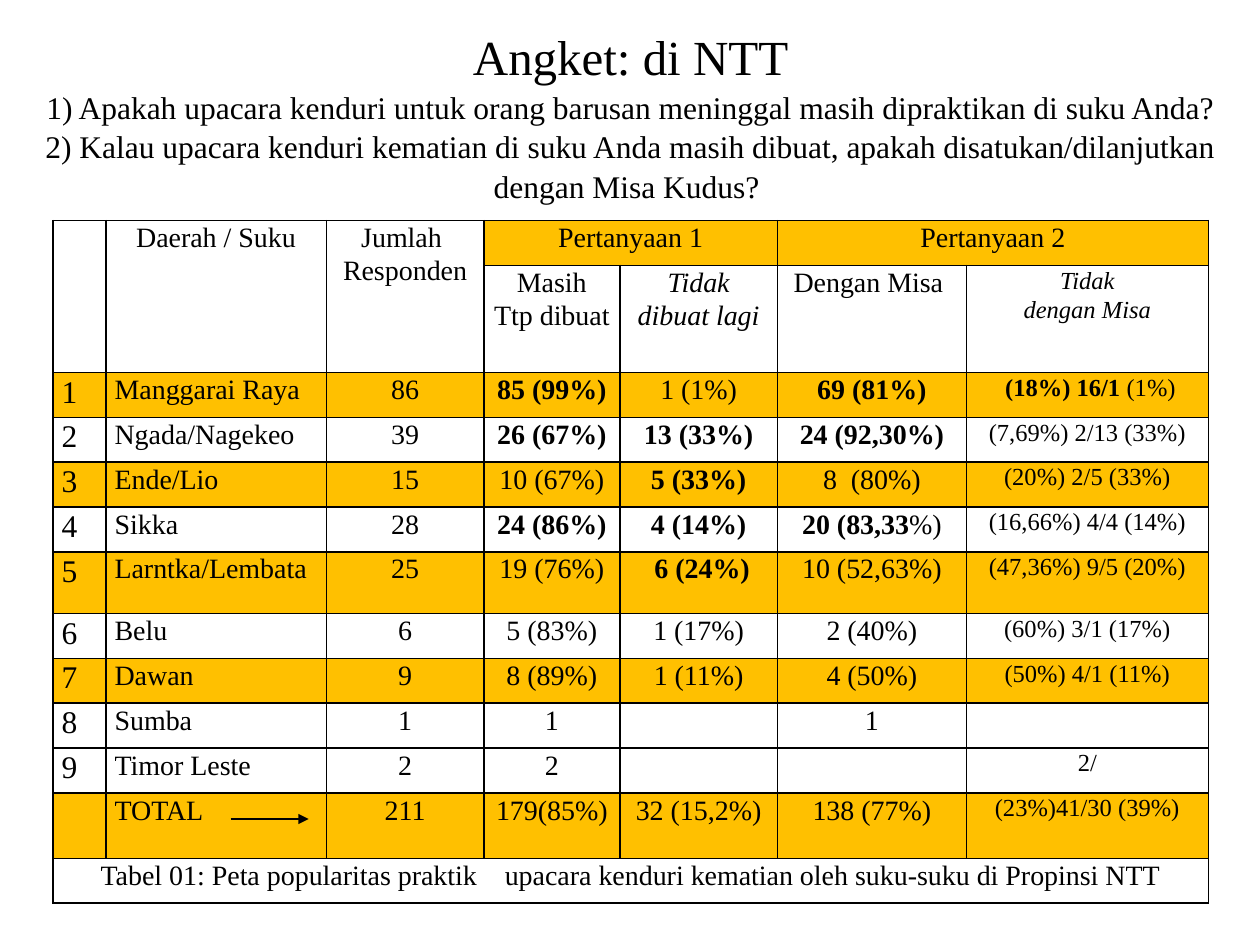
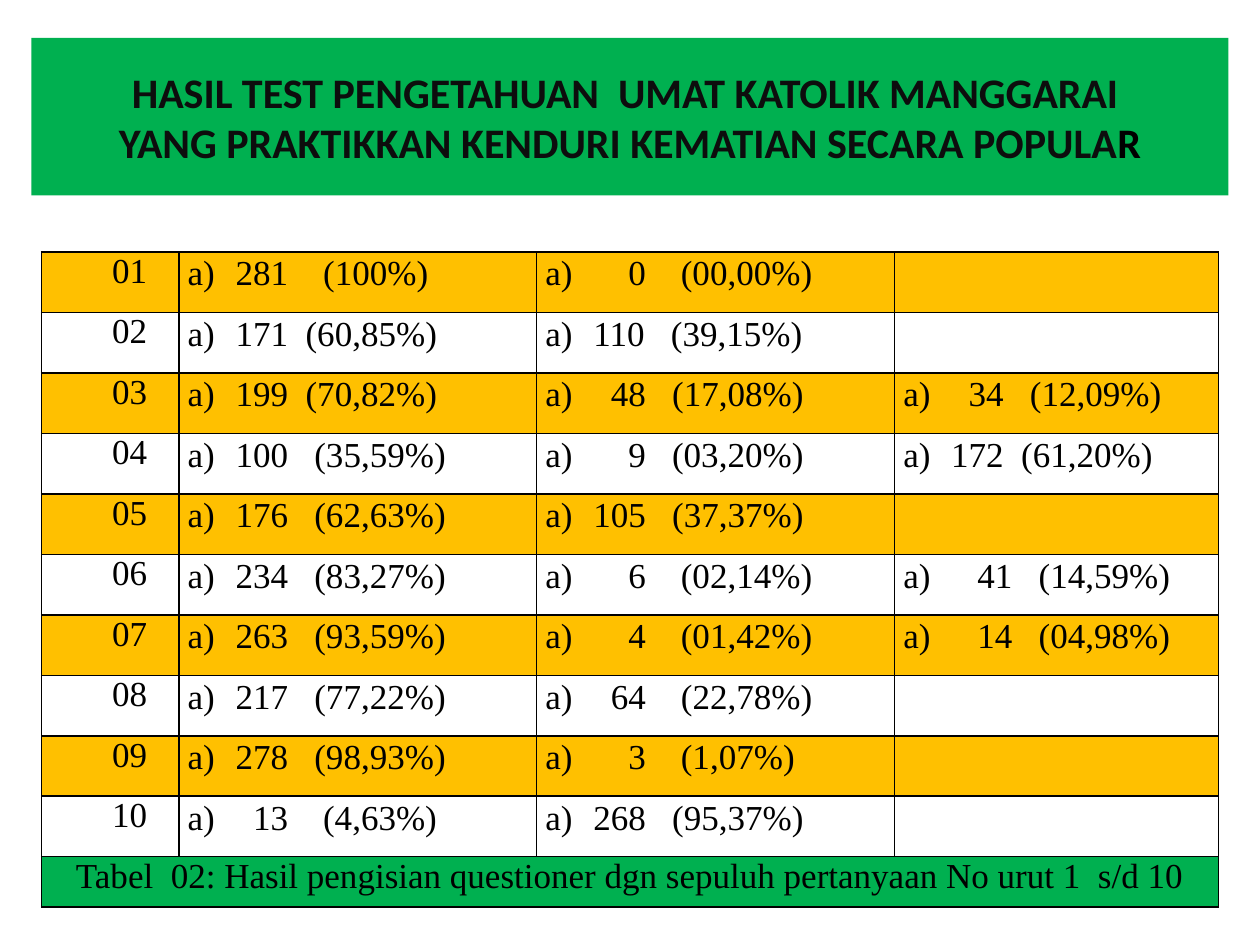
"""Builds two slides of survey tables on death-feast customs in NTT."""
import pptx
import pptx.dml.color
import pptx.enum.shapes
import pptx.enum.text
import pptx.oxml.ns
import pptx.util
from lxml import etree

BLACK = pptx.dml.color.RGBColor(0x00, 0x00, 0x00)
INK = pptx.dml.color.RGBColor(0x0D, 0x0D, 0x0D)
AMBER = pptx.dml.color.RGBColor(0xFF, 0xC0, 0x00)
GREEN = pptx.dml.color.RGBColor(0x00, 0xB0, 0x50)
SERIF, SANS = "Times New Roman", "Calibri"
CENTER = pptx.enum.text.PP_ALIGN.CENTER
LEFT = pptx.enum.text.PP_ALIGN.LEFT
MIDDLE = pptx.enum.text.MSO_ANCHOR.MIDDLE
Inches, Pt, qn = pptx.util.Inches, pptx.util.Pt, pptx.oxml.ns.qn


def add_grid(slide, left, top, widths, heights, fills):
    """Add a black-ruled table whose rows take the given fills."""
    grid = slide.shapes.add_table(
        len(heights), len(widths), Inches(left), Inches(top),
        Inches(sum(widths)), Inches(sum(heights))).table
    grid.first_row = grid.horz_banding = False
    for column, width in zip(grid.columns, widths):
        column.width = Inches(width)
    for index, (row, height) in enumerate(zip(grid.rows, heights)):
        row.height = Inches(height)
        for cell in row.cells:
            cell.margin_left = cell.margin_right = Inches(0.07)
            cell.margin_top = cell.margin_bottom = 0
            for side in ("a:lnL", "a:lnR", "a:lnT", "a:lnB"):
                rule = etree.SubElement(cell._tc.get_or_add_tcPr(), qn(side), w=str(Pt(1)))
                solid = etree.SubElement(rule, qn("a:solidFill"))
                etree.SubElement(solid, qn("a:srgbClr"), val=str(BLACK))
            if index in fills:
                cell.fill.solid()
                cell.fill.fore_color.rgb = fills[index]
            else:
                cell.fill.background()
    return grid


def write(paragraph, text, size, align=CENTER, spacing=1.07, face=SERIF, color=BLACK):
    """Write text in one style; parts between double asterisks are bold."""
    for index, part in enumerate(text.split("**")):
        if part:
            run = paragraph.add_run()
            run.text = part
            if index % 2:
                run.font.bold = True
    paragraph.alignment = align
    paragraph.line_spacing = spacing
    paragraph.font.size = Pt(size)
    paragraph.font.name = face
    paragraph.font.color.rgb = color


deck = pptx.Presentation()
deck.slide_width, deck.slide_height = Inches(10), Inches(7.5)
blank = deck.slide_layouts[6]

survey = deck.slides.add_slide(blank)
heading = survey.shapes.add_textbox(
    Inches(0.17), Inches(0.17), Inches(9.67), Inches(1.5)).text_frame
heading.word_wrap = True
heading.vertical_anchor = MIDDLE
write(heading.paragraphs[0], "Angket: di NTT", 28, spacing=1.0)
write(heading.add_paragraph(),
      "1) Apakah upacara kenduri untuk orang barusan meninggal masih dipraktikan di suku Anda? "
      "2) Kalau upacara kenduri kematian di suku Anda masih dibuat, apakah "
      "disatukan/dilanjutkan dengan Misa Kudus? ", 18, spacing=1.05)

regions = [
    ("1", "Manggarai Raya", "86", "**85 (99%)**", "1 (1%)", "**69 (81%)**", " **(18%) 16/1 **(1%)"),
    ("2", "Ngada/Nagekeo", "39", "**26 (67%)**", "**13 (33%)**", "**24 (92,30%)**",
     "(7,69%) 2/13 (33%)"),
    ("3", "Ende/Lio", "15", "10 (67%)", "**5 (33%)**", "8  (80%)", "(20%) 2/5 (33%)"),
    ("4", "Sikka", "28", "**24 (86%)**", "**4 (14%)**", "**20 (83,33**%)", "(16,66%) 4/4 (14%)"),
    ("5", "Larntka/Lembata", "25", "19 (76%)", "** 6 (24%)**", "10 (52,63%)",
     "(47,36%) 9/5 (20%)"),
    ("6", "Belu", "6", "5 (83%)", "1 (17%)", "2 (40%)", "(60%) 3/1 (17%)"),
    ("7", "Dawan", "9", "8 (89%)", "1 (11%)", "4 (50%)", "(50%) 4/1 (11%)"),
    ("8", "Sumba", "1", "1", "", "1", ""),
    ("9", "Timor Leste", "2", "2", "", "", "2/"),
    ("", "TOTAL", "211", "179(85%)", "32 (15,2%)", "138 (77%)", "(23%)41/30 (39%)"),
]
tall_rows = {1: 0.85, 6: 0.49, 11: 0.52}
plain_height = (5.42 - sum(tall_rows.values())) / 10
popularity = add_grid(
    survey, 0.42, 1.75, [0.42, 1.75, 1.25, 1.08, 1.25, 1.5, 1.92],
    [tall_rows.get(row, plain_height) for row in range(13)],
    {row: AMBER for row in (2, 4, 6, 8, 11)})
for first, last in [((0, 0), (1, 0)), ((0, 1), (1, 1)), ((0, 2), (1, 2)),
                    ((0, 3), (0, 4)), ((0, 5), (0, 6)), ((12, 0), (12, 6))]:
    popularity.cell(*first).merge(popularity.cell(*last))
for column in range(3, 7):
    question = popularity.cell(0, column)
    question.fill.solid()
    question.fill.fore_color.rgb = AMBER

headers = [
    (0, 1, ["Daerah / Suku"]), (0, 2, ["Jumlah  Responden"]),
    (0, 3, ["Pertanyaan 1"]), (0, 5, ["Pertanyaan 2"]),
    (1, 3, ["Masih", "Ttp dibuat"]), (1, 4, ["Tidak", "dibuat lagi"]),
    (1, 5, ["Dengan Misa "]), (1, 6, ["Tidak", "dengan Misa"]),
    (12, 0, ["Tabel 01: Peta popularitas praktik    upacara kenduri kematian "
             "oleh suku-suku di Propinsi NTT"]),
]
for row, column, lines in headers:
    label = popularity.cell(row, column).text_frame
    for index, line in enumerate(lines):
        paragraph = label.add_paragraph() if index else label.paragraphs[0]
        write(paragraph, line, 14 if column == 6 else 16)
        if lines[0] == "Tidak":
            paragraph.font.italic = True

sizes = [18, 16, 16, 16, 16, 16, 14]
for row, region in enumerate(regions, start=2):
    for column, (value, size) in enumerate(zip(region, sizes)):
        write(popularity.cell(row, column).text_frame.paragraphs[0], value, size,
              LEFT if column < 2 else CENTER)

total_arrow = survey.shapes.add_connector(
    pptx.enum.shapes.MSO_CONNECTOR.STRAIGHT,
    Inches(1.83), Inches(6.5), Inches(2.45), Inches(6.5))
total_arrow.line.color.rgb = BLACK
total_arrow.line.width = Pt(0.75)
etree.SubElement(total_arrow.line._get_or_add_ln(), qn("a:tailEnd"), type="triangle")
etree.SubElement(total_arrow._element.spPr, qn("a:effectLst"))

test = deck.slides.add_slide(blank)
banner = test.shapes.add_shape(
    pptx.enum.shapes.MSO_SHAPE.RECTANGLE, Inches(0.25), Inches(0.3), Inches(9.5), Inches(1.25))
banner.shadow.inherit = False
banner.fill.solid()
banner.fill.fore_color.rgb = GREEN
banner.line.fill.background()
title = banner.text_frame
title.word_wrap = True
title.vertical_anchor = MIDDLE
write(title.paragraphs[0], "**HASIL TEST PENGETAHUAN  UMAT KATOLIK MANGGARAI **",
      24, spacing=1.0, face=SANS, color=INK)
write(title.add_paragraph(), "**YANG PRAKTIKKAN KENDURI KEMATIAN SECARA POPULA**",
      24, spacing=1.0, face=SANS, color=INK)
last_letter = title.paragraphs[1].add_run()
last_letter.text = "R"
last_letter.font.bold = True
last_letter.font.color.rgb = BLACK

answers = [
    ("281    (100%)", "    0    (00,00%)", ""),
    ("171  (60,85%)", "110   (39,15%)", ""),
    ("199  (70,82%)", "  48   (17,08%)", "  34   (12,09%)"),
    ("100   (35,59%)", "    9   (03,20%)", "172  (61,20%)"),
    ("176   (62,63%)", "105   (37,37%)", ""),
    ("234   (83,27%)", "    6    (02,14%)", "   41   (14,59%)"),
    ("263   (93,59%)", "    4    (01,42%)", "   14   (04,98%)"),
    ("217   (77,22%)", "  64    (22,78%)", ""),
    ("278   (98,93%)", "    3    (1,07%)", ""),
    ("  13    (4,63%)", "268   (95,37%)", ""),
]
bands = {row: AMBER for row in range(0, 10, 2)}
bands[10] = GREEN
results = add_grid(test, 0.33, 2, [1.09, 2.84, 2.84, 2.57],
                   [0.48] * len(answers) + [0.4], bands)
for row, choices in enumerate(answers):
    number = results.cell(row, 0).text_frame.paragraphs[0]
    number_layout = number._p.get_or_add_pPr()
    number_layout.set("marL", str(Inches(0.5)))
    number_layout.set("indent", str(Inches(-0.19)))
    write(number, f"{row + 1:02}", 20, spacing=1.0)
    for column, choice in enumerate(choices, start=1):
        if choice:
            answer = results.cell(row, column).text_frame.paragraphs[0]
            answer_layout = answer._p.get_or_add_pPr()
            answer_layout.set("marL", str(Inches(0.38)))
            answer_layout.set("indent", str(Inches(-0.38)))
            etree.SubElement(answer_layout, qn("a:buAutoNum"), type="alphaLcParenR")
            write(answer, choice, 20, LEFT)
results.cell(10, 0).merge(results.cell(10, 3))
write(results.cell(10, 0).text_frame.paragraphs[0],
      "Tabel  02: Hasil pengisian questioner dgn sepuluh pertanyaan No urut 1  s/d 10",
      20, spacing=1.0)

deck.save("out.pptx")
